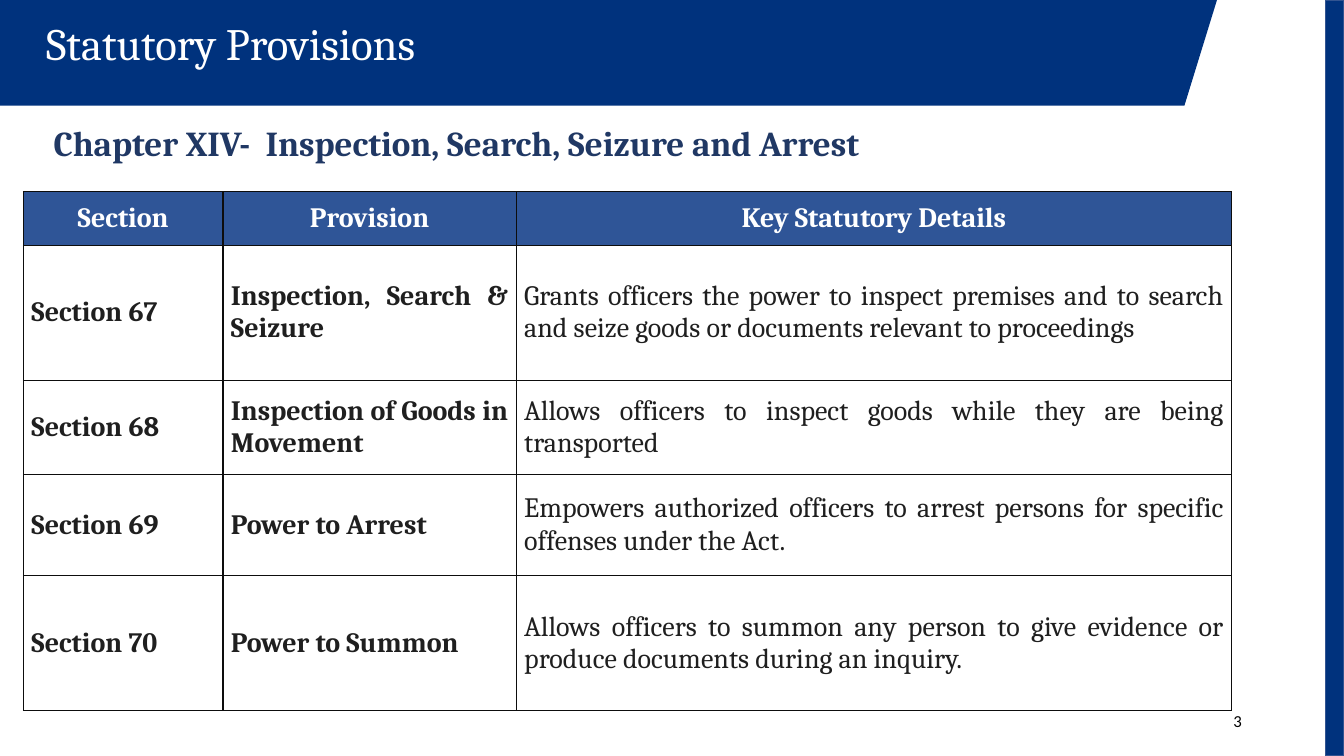
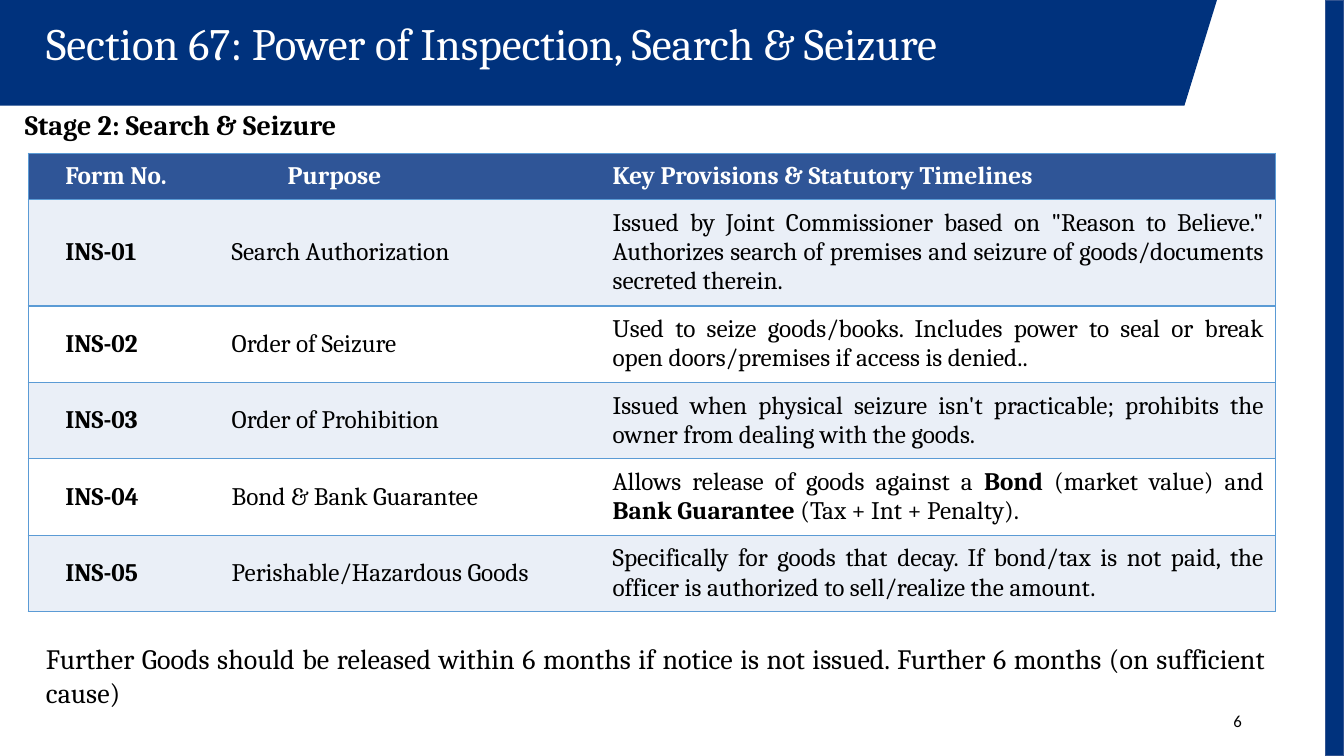
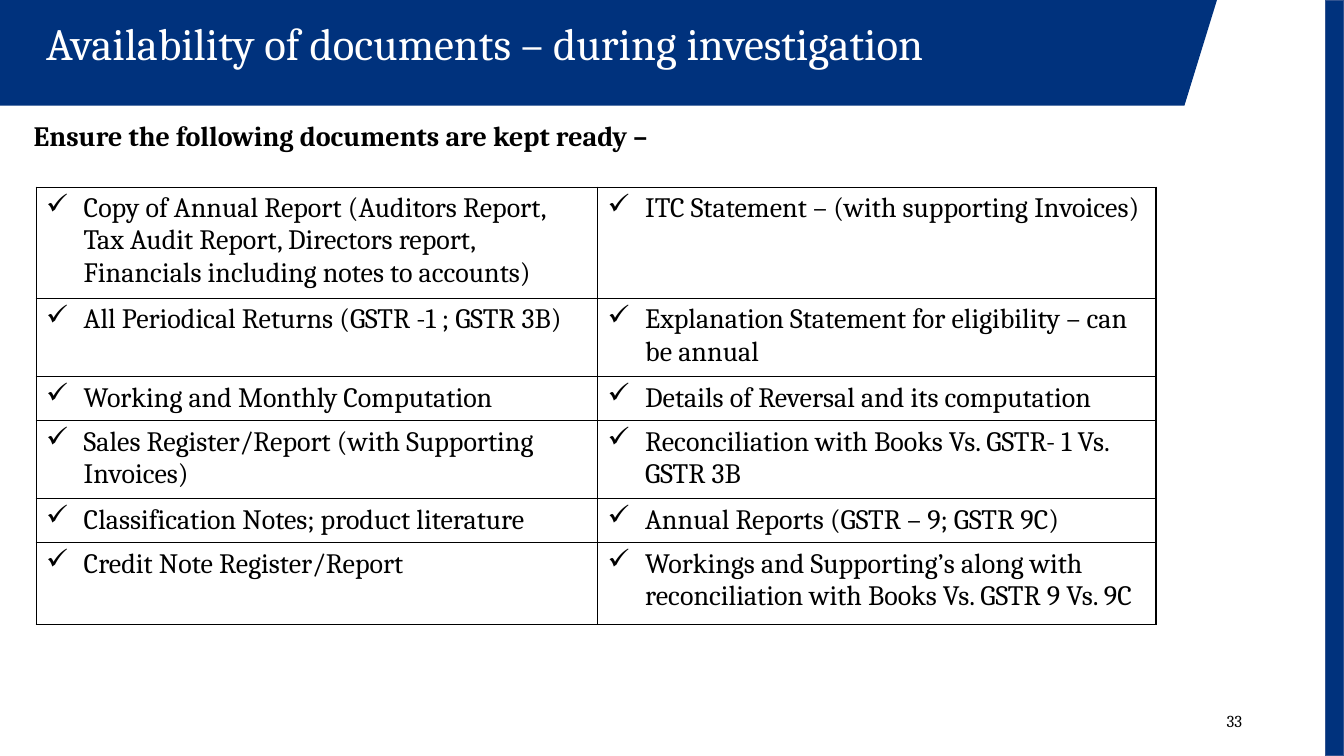
from dataclasses import dataclass

from lxml.etree import SubElement
from pptx import Presentation
from pptx.dml.color import RGBColor as RGB
from pptx.enum.shapes import MSO_SHAPE as SHAPE
from pptx.enum.text import MSO_ANCHOR as ANCHOR, MSO_AUTO_SIZE as FIT, PP_ALIGN as ALIGN
from pptx.oxml.ns import qn
from pptx.util import Cm, Pt


@dataclass(frozen=True)
class Theme:
    band: str = "00327D"
    bar_line: str = "325491"
    header: str = "2F5597"
    stripe: str = "EAEFF7"
    grid_blue: str = "5B9BD5"
    grid_dark: str = "0D0D0D"
    chapter: str = "203864"
    soft_black: str = "1F1F1F"
    black: str = "000000"
    white: str = "FFFFFF"
    font: str = "Cambria"
    number_font: str = "Calibri"
    title_size: int = 32
    chapter_size: int = 25
    body_size: int = 20
    compact_size: int = 18
    number_size: int = 12


@dataclass(frozen=True)
class TableLook:
    line: str
    color: str
    size: int
    margins: tuple
    anchor: ANCHOR = ANCHOR.MIDDLE
    align: ALIGN = ALIGN.JUSTIFY
    header_align: ALIGN = ALIGN.JUSTIFY
    has_header: bool = True
    inner_verticals: bool = True
    fills: tuple = (None,)
    bold_cols: tuple = ()
    indent: float = 0
    bullet: str = ""


T = Theme()
SLIDE_W, SLIDE_H = 33.87, 19.05
STATUTE_LOOK = TableLook(T.grid_dark, T.soft_black, T.body_size, (0.2, 0.13),
                         header_align=ALIGN.CENTER, bold_cols=(0, 1))
FORMS_LOOK = TableLook(T.grid_blue, T.black, T.compact_size, (0.3, 0.2),
                       inner_verticals=False, fills=(T.stripe, T.white),
                       bold_cols=(0,), indent=0.64)
CHECK_LOOK = TableLook(T.black, T.black, T.body_size, (0.25, 0.13),
                       anchor=ANCHOR.TOP, align=ALIGN.LEFT, has_header=False,
                       indent=0.95, bullet="✓")


def rgb(color):
    return RGB.from_string(color)


def write(p, text, size, color, bold=False, font=T.font):
    for i, part in enumerate(text.split("**")):
        r = p.add_run()
        r.text = part
        r.font.name = font
        r.font.size = Pt(size)
        r.font.bold = bold or i % 2 == 1
        r.font.color.rgb = rgb(color)


def place(sp, box):
    sp.left, sp.top, sp.width, sp.height = map(Cm, box)


def add_text(s, box, text, size, color=T.black, bold=False, font=T.font,
             align=ALIGN.LEFT, anchor=ANCHOR.TOP, spacing=1.0):
    tf = s.shapes.add_textbox(*map(Cm, box)).text_frame
    tf.word_wrap = True
    tf.vertical_anchor = anchor
    p = tf.paragraphs[0]
    p.alignment = align
    p.line_spacing = spacing
    write(p, text, size, color, bold, font)


def paint(sp, fill, line=None):
    sp.shadow.inherit = False
    sp.fill.solid()
    sp.fill.fore_color.rgb = rgb(fill)
    if line:
        sp.line.color.rgb = rgb(line)
        sp.line.width = Pt(1)
    else:
        sp.line.fill.background()


def add_frame(s):
    height, top_right, bottom_right = 2.66, 30.67, 29.85
    outline = s.shapes.build_freeform(0, 0)
    outline.add_line_segments([(Cm(x), Cm(y)) for x, y in (
        (0, height), (bottom_right, height), (top_right, 0))])
    band = outline.convert_to_shape()
    paint(band, T.band)
    bar_w = 0.46
    bar = s.shapes.add_shape(SHAPE.RECTANGLE, Cm(SLIDE_W - bar_w), 0, Cm(bar_w), Cm(SLIDE_H))
    paint(bar, T.band, T.bar_line)
    return band, bar


def move_to_layout(layout, shapes):
    tree = layout.shapes._spTree
    for i, sp in enumerate(shapes):
        tree.insert(2 + i, sp._element)


def add_slide(prs, layout, title, number, number_font=T.number_font):
    s = prs.slides.add_slide(layout)
    place(s.shapes.title, (0.91, 0.41, 28.7, 1.63))
    tf = s.shapes.title.text_frame
    tf.auto_size = FIT.NONE
    tf.word_wrap = True
    tf.vertical_anchor = ANCHOR.TOP
    p = tf.paragraphs[0]
    p.alignment = ALIGN.LEFT
    p.line_spacing = 0.9
    write(p, title, T.title_size, T.white)
    add_text(s, (23.93, 17.66, 7.62, 1.01), number, T.number_size,
             font=number_font, align=ALIGN.RIGHT, anchor=ANCHOR.MIDDLE)
    return s


def set_borders(cell, color, visible):
    tc_pr = cell._tc.get_or_add_tcPr()
    for side in "LRTB":
        ln = SubElement(tc_pr, qn(f"a:ln{side}"), w=str(Pt(1)))
        if side in visible:
            fill = SubElement(ln, qn("a:solidFill"))
            SubElement(fill, qn("a:srgbClr"), val=color)
        else:
            SubElement(ln, qn("a:noFill"))


def set_indent(p, indent, bullet):
    p_pr = p._p.get_or_add_pPr()
    p_pr.set("marL", str(Cm(indent)))
    p_pr.set("indent", str(-Cm(indent) if bullet else 0))
    if bullet:
        SubElement(p_pr, qn("a:buChar"), char=bullet)


def visible_sides(look, col, last):
    if look.inner_verticals:
        return "LRTB"
    return "TB" + ("L" if col == 0 else "") + ("R" if col == last else "")


def fill_cell(cell, text, look, row, col, last, indent):
    is_header = look.has_header and row == 0
    cell.margin_left = cell.margin_right = Cm(look.margins[0])
    cell.margin_top = cell.margin_bottom = Cm(look.margins[1])
    cell.vertical_anchor = look.anchor
    set_borders(cell, look.line, visible_sides(look, col, last))
    fill = T.header if is_header else look.fills[(row - 1) % len(look.fills)]
    if fill:
        cell.fill.solid()
        cell.fill.fore_color.rgb = rgb(fill)
    else:
        cell.fill.background()
    p = cell.text_frame.paragraphs[0]
    p.alignment = look.header_align if is_header else look.align
    set_indent(p, indent, look.bullet)
    write(p, text, look.size, T.white if is_header else look.color,
          is_header or col in look.bold_cols)


def add_grid(s, left, top, widths, heights, look, rows, indents=None):
    indents = indents or {}
    frame = s.shapes.add_table(len(rows), len(widths), Cm(left), Cm(top),
                               Cm(sum(widths)), Cm(sum(heights)))
    table = frame.table
    table.first_row = table.horz_banding = False
    for column, width in zip(table.columns, widths):
        column.width = Cm(width)
    for i, (height, texts) in enumerate(zip(heights, rows)):
        table.rows[i].height = Cm(height)
        for j, text in enumerate(texts):
            fill_cell(table.cell(i, j), text, look, i, j, len(widths) - 1,
                      indents.get((i, j), look.indent))


def statutory_provisions(s):
    add_text(s, (1.1, 3.07, 31.5, 1.4), "Chapter XIV-  Inspection, Search, Seizure and Arrest",
             T.chapter_size, T.chapter, bold=True, spacing=0.9)
    add_grid(s, 0.59, 4.83, (5.03, 7.39, 18.03), (1.35, 3.4, 2.37, 2.56, 3.4), STATUTE_LOOK, [
        ("Section", "Provision", "Key Statutory Details"),
        ("Section 67", "Inspection, Search & Seizure",
         "Grants officers the power to inspect premises and to search and seize goods "
         "or documents relevant to proceedings"),
        ("Section 68", "Inspection of Goods in Movement",
         "Allows officers to inspect goods while they are being transported"),
        ("Section 69", "Power to Arrest",
         "Empowers authorized officers to arrest persons for specific offenses under the Act."),
        ("Section 70", "Power to Summon",
         "Allows officers to summon any person to give evidence or produce documents "
         "during an inquiry."),
    ])


def search_and_seizure(s):
    add_text(s, (0.38, 2.69, 32.3, 1.1), "Stage 2: Search & Seizure",
             T.body_size, bold=True, spacing=0.9)
    add_grid(s, 0.71, 3.86, (4.19, 9.6, 17.65), (1.14, 2.64) + (1.89,) * 4, FORMS_LOOK, [
        ("Form No.", "Purpose", "Key Provisions & Statutory Timelines"),
        ("INS-01", "Search Authorization",
         'Issued by Joint Commissioner based on "Reason to Believe." Authorizes search of '
         "premises and seizure of goods/documents secreted therein."),
        ("INS-02", "Order of Seizure",
         "Used to seize goods/books. Includes power to seal or break open doors/premises "
         "if access is denied.."),
        ("INS-03", "Order of Prohibition",
         "Issued when physical seizure isn't practicable; prohibits the owner from dealing "
         "with the goods."),
        ("INS-04", "Bond & Bank Guarantee",
         "Allows release of goods against a **Bond** (market value) and **Bank Guarantee** "
         "(Tax + Int + Penalty)."),
        ("INS-05", "Perishable/Hazardous Goods",
         "Specifically for goods that decay. If bond/tax is not paid, the officer is "
         "authorized to sell/realize the amount."),
    ], indents={(0, 1): 2.05})
    add_text(s, (0.91, 16.05, 31.24, 2.2),
             "Further Goods should be released within 6 months if notice is not issued. "
             "Further 6 months (on sufficient cause)", T.body_size, align=ALIGN.JUSTIFY)


def document_checklist(s):
    add_text(s, (0.6, 2.87, 30.07, 1.1), "Ensure the following documents are kept ready –",
             T.body_size, bold=True)
    add_grid(s, 0.91, 4.72, (14.15, 14.07), (2.79, 1.97, 1.09, 1.97, 1.09, 2.06), CHECK_LOOK, [
        ("Copy of Annual Report (Auditors Report, Tax Audit Report, Directors report, "
         "Financials including notes to accounts)",
         "ITC Statement – (with supporting Invoices)"),
        ("All Periodical Returns (GSTR -1 ; GSTR 3B)",
         "Explanation Statement for eligibility – can be annual"),
        ("Working and Monthly Computation", "Details of Reversal and its computation"),
        ("Sales Register/Report (with Supporting Invoices)",
         "Reconciliation with Books Vs. GSTR- 1 Vs. GSTR 3B"),
        ("Classification Notes; product literature", "Annual Reports (GSTR – 9; GSTR 9C)"),
        ("Credit Note Register/Report",
         "Workings and Supporting’s along with reconciliation with Books Vs. GSTR 9 Vs. 9C"),
    ])


def main():
    prs = Presentation()
    prs.slide_width, prs.slide_height = Cm(SLIDE_W), Cm(SLIDE_H)
    layout = prs.slide_layouts[5]
    s = add_slide(prs, layout, "Statutory Provisions", "3")
    move_to_layout(layout, add_frame(s))
    statutory_provisions(s)
    search_and_seizure(add_slide(
        prs, layout, "Section 67: Power of Inspection, Search & Seizure", "6"))
    document_checklist(add_slide(
        prs, layout, "Availability of documents – during investigation", "33", T.font))
    prs.save("out.pptx")


if __name__ == "__main__":
    main()
